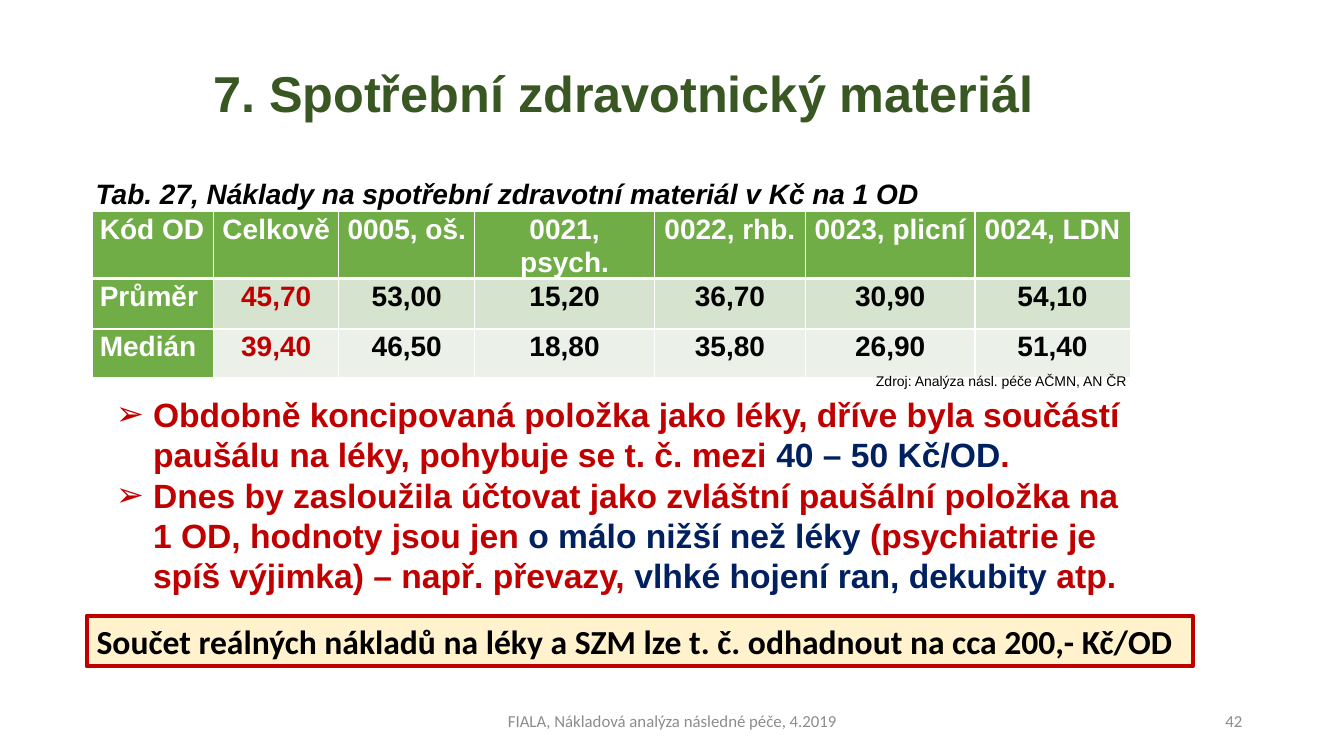
"""Build the slide on the cost of consumable medical supplies."""
from typing import NamedTuple

from lxml import etree
from pptx import Presentation
from pptx.dml.color import RGBColor
from pptx.enum.shapes import MSO_SHAPE
from pptx.enum.text import MSO_ANCHOR, PP_ALIGN
from pptx.oxml.ns import qn
from pptx.util import Inches, Pt

LEFT, MID, RIGHT = PP_ALIGN.LEFT, PP_ALIGN.CENTER, PP_ALIGN.RIGHT
TOP, CENTER = MSO_ANCHOR.TOP, MSO_ANCHOR.MIDDLE
RECT = MSO_SHAPE.RECTANGLE

WHITE = RGBColor(0xFF, 0xFF, 0xFF)
BLACK = RGBColor(0x00, 0x00, 0x00)
GREEN = RGBColor(0x70, 0xAD, 0x47)
FOREST = RGBColor(0x38, 0x57, 0x23)
SAGE = RGBColor(0xD5, 0xE3, 0xCF)
MIST = RGBColor(0xEB, 0xF1, 0xE9)
RED = RGBColor(0xC0, 0x00, 0x00)
NAVY = RGBColor(0x00, 0x20, 0x60)
CREAM = RGBColor(0xFF, 0xF2, 0xCC)
GRAY = RGBColor(0x8C, 0x8C, 0x8C)


class Style(NamedTuple):
    size: int
    color: RGBColor
    bold: bool = False
    slant: bool = False
    font: str = "Arial"


class Label(NamedTuple):
    text: str
    box: tuple[float, float, float, float]
    style: Style
    align: PP_ALIGN = LEFT
    anchor: MSO_ANCHOR = TOP
    wrap: bool = True
    space: float = 1


class Point(NamedTuple):
    mark: bool
    runs: list[tuple[str, RGBColor]]


FOOT = Style(12, GRAY, font="Calibri")
LABELS = [
    Label("7. Spotřební zdravotnický materiál", (0.92, 0.4, 10.53, 1.11),
          Style(36, FOREST, True), MID, CENTER, space=0.9),
    Label("Tab. 27, Náklady na spotřební zdravotní materiál v Kč na 1 OD",
          (0.85, 1.74, 10.93, 0.36), Style(20, BLACK, True, True), space=0.9),
    Label("Zdroj: Analýza násl. péče AČMN, AN ČR", (8.59, 3.65, 2.73, 0.27),
          Style(10, BLACK), wrap=False),
    Label("FIALA, Nákladová analýza následné péče, 4.2019",
          (4.42, 6.95, 4.5, 0.4), FOOT, MID, CENTER),
    Label("42", (9.42, 6.95, 3, 0.4), FOOT, RIGHT, CENTER),
]
NOTE = Label("Součet reálných nákladů na léky a SZM lze t. č. odhadnout na cca 200,- Kč/OD",
             (0.86, 6.11, 10.97, 0.5), Style(24, BLACK, True, font="Calibri"),
             anchor=CENTER, wrap=False)
POINTS = [
    Point(True, [("Obdobně koncipovaná položka jako léky, dříve byla součástí", RED)]),
    Point(False, [("paušálu na léky, pohybuje se t. č. mezi ", RED),
                  ("40 – 50 Kč/OD", NAVY), (".", RED)]),
    Point(True, [("Dnes by zasloužila účtovat jako zvláštní paušální položka na "
                  "1 OD, hodnoty jsou jen", RED),
                 (" o málo nižší než léky ", NAVY),
                 ("(psychiatrie je spíš výjimka) – např. převazy, ", RED),
                 ("vlhké hojení ran, dekubity", NAVY), (" atp.", RED)]),
]
COSTS = [
    ["Kód OD", "Celkově", "0005, oš.", "0021, psych.", "0022, rhb.", "0023, plicní", "0024, LDN"],
    ["Průměr", "45,70", "53,00", "15,20", "36,70", "30,90", "54,10"],
    ["Medián", "39,40", "46,50", "18,80", "35,80", "26,90", "51,40"],
]
WIDTHS = [1.2, 1.24, 1.35, 1.78, 1.5, 1.68, 1.54]
HEIGHTS = [0.66, 0.5, 0.48]
BANDS = [GREEN, SAGE, MIST]


def add_run(para, text: str, style: Style) -> None:
    """Append one styled run."""
    run = para.add_run()
    run.text = text
    font = run.font
    font.name, font.size = style.font, Pt(style.size)
    font.bold, font.italic = style.bold, style.slant
    font.color.rgb = style.color


def fill_text(shape, label: Label) -> None:
    """Put the text of a label into a shape."""
    frame = shape.text_frame
    frame.word_wrap = label.wrap
    frame.vertical_anchor = label.anchor
    para = frame.paragraphs[0]
    para.alignment = label.align
    para.line_spacing = label.space
    add_run(para, label.text, label.style)


def add_label(slide, label: Label) -> None:
    """Draw a label as a text box."""
    fill_text(slide.shapes.add_textbox(*map(Inches, label.box)), label)


def add_note(slide, label: Label) -> None:
    """Draw the framed conclusion."""
    shape = slide.shapes.add_shape(RECT, *map(Inches, label.box))
    shape.shadow.inherit = False
    shape.fill.solid()
    shape.fill.fore_color.rgb = CREAM
    shape.line.color.rgb = RED
    shape.line.width = Pt(3)
    fill_text(shape, label)


def add_points(slide, points: list[Point]) -> None:
    """Draw the list with arrow bullets."""
    box = slide.shapes.add_textbox(*map(Inches, (1.05, 3.86, 10.2, 2.12)))
    frame = box.text_frame
    frame.word_wrap = True
    for i, point in enumerate(points):
        para = frame.add_paragraph() if i else frame.paragraphs[0]
        props = para._p.get_or_add_pPr()
        props.set("marL", str(Inches(0.37)))
        if point.mark:
            props.set("indent", str(Inches(-0.37)))
            etree.SubElement(props, qn("a:buFont"), typeface="Arial")
            etree.SubElement(props, qn("a:buChar"), char="➢")
        for text, color in point.runs:
            add_run(para, text, Style(24, color, True))


def set_edges(cell, row: int) -> None:
    """Give a cell white borders, thick under the header."""
    props = cell._tc.get_or_add_tcPr()
    sizes = {"L": 1, "R": 1, "T": 3 if row == 1 else 1, "B": 3 if row == 0 else 1}
    for i, (side, size) in enumerate(sizes.items()):
        edge = etree.Element(qn(f"a:ln{side}"), w=str(Pt(size)))
        fill = etree.SubElement(edge, qn("a:solidFill"))
        etree.SubElement(fill, qn("a:srgbClr"), val=str(WHITE))
        props.insert(i, edge)


def add_costs(slide) -> None:
    """Draw the table of costs."""
    place = map(Inches, (0.92, 2.1, sum(WIDTHS), sum(HEIGHTS)))
    table = slide.shapes.add_table(len(COSTS), len(WIDTHS), *place).table
    for col, width in zip(table.columns, WIDTHS):
        col.width = Inches(width)
    for r, (texts, height) in enumerate(zip(COSTS, HEIGHTS)):
        table.rows[r].height = Inches(height)
        for c, text in enumerate(texts):
            cell = table.cell(r, c)
            head = r == 0 or c == 0
            cell.margin_left = cell.margin_right = Inches(0.07)
            cell.margin_top = cell.margin_bottom = 0
            cell.fill.solid()
            cell.fill.fore_color.rgb = GREEN if head else BANDS[r]
            set_edges(cell, r)
            para = cell.text_frame.paragraphs[0]
            para.alignment = MID if c else LEFT
            para.line_spacing = 1.07
            color = WHITE if head else RED if c == 1 else BLACK
            add_run(para, text, Style(20, color, True))


def main() -> None:
    """Build and save the slide."""
    deck = Presentation()
    deck.slide_width, deck.slide_height = Inches(13.33), Inches(7.5)
    slide = deck.slides.add_slide(deck.slide_layouts[6])
    add_costs(slide)
    for label in LABELS:
        add_label(slide, label)
    add_points(slide, POINTS)
    add_note(slide, NOTE)
    deck.save("out.pptx")


if __name__ == "__main__":
    main()
